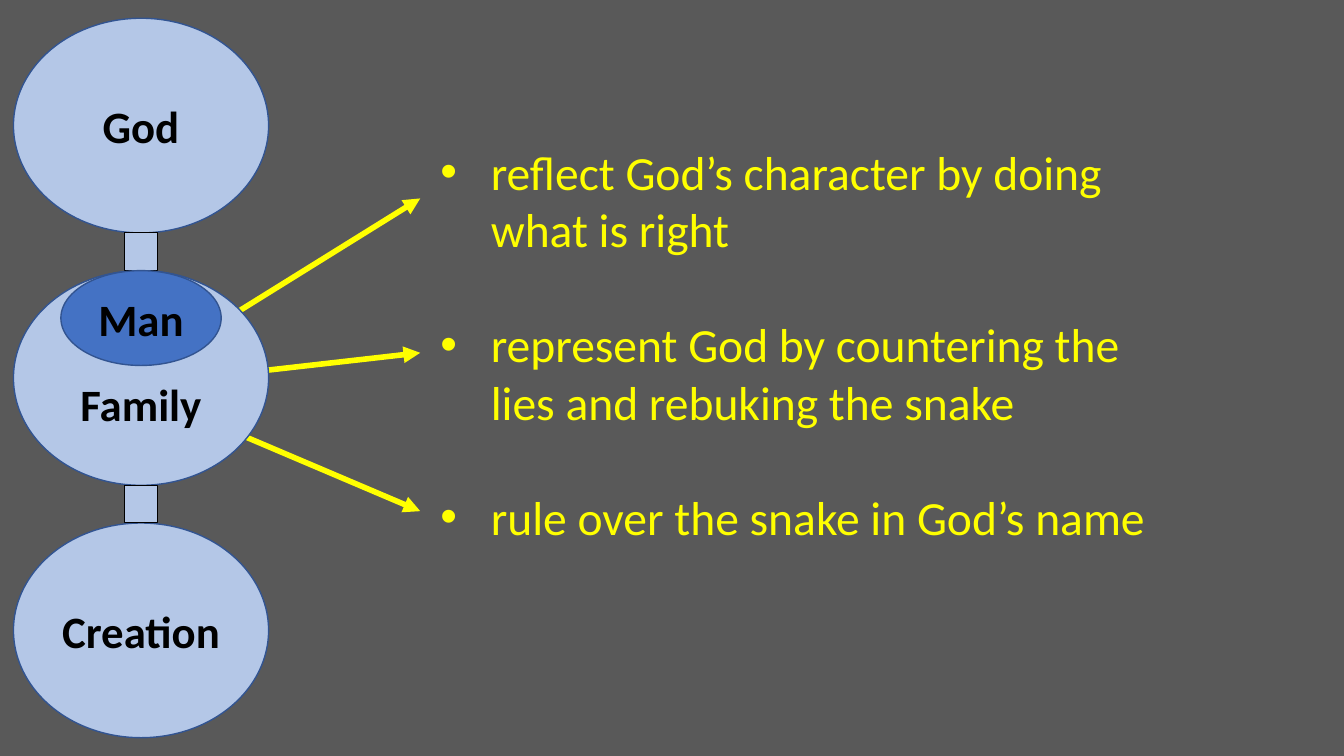
from lxml import etree
from pptx import Presentation
from pptx import util as u
from pptx.dml.color import RGBColor
from pptx.enum import shapes, text
from pptx.oxml.ns import qn

COLORS = {
    "background": "595959",
    "highlight": "FFFF00",
    "circle": "B4C7E7",
    "man": "4472C4",
    "outline": "325491",
    "black": "000000",
}
FONT = "Calibri"


def color(name):
    """Return the named colour."""
    return RGBColor.from_string(COLORS[name])


def format_runs(paragraph, size, color_name, bold=False):
    """Format every run of a paragraph."""
    for run in paragraph.runs:
        run.font.name = FONT
        run.font.size = u.Pt(size)
        run.font.bold = bold
        run.font.color.rgb = color(color_name)


def add_block(slide, kind, box, fill, outline, width, label="", drop=0):
    """Add a filled shape whose centred label sits lower by half the drop."""
    shape = slide.shapes.add_shape(kind, *(u.Cm(length) for length in box))
    shape.shadow.inherit = False
    shape.fill.solid()
    shape.fill.fore_color.rgb = color(fill)
    shape.line.color.rgb = color(outline)
    shape.line.width = u.Pt(width)
    if label:
        frame = shape.text_frame
        frame.margin_left = frame.margin_right = 0
        frame.margin_top = u.Cm(0.13 + drop)
        frame.vertical_anchor = text.MSO_ANCHOR.MIDDLE
        frame.text = label
        paragraph = frame.paragraphs[0]
        paragraph.alignment = text.PP_ALIGN.CENTER
        format_runs(paragraph, 32, "black", bold=True)


def add_chain(slide, left, top, width, height):
    """Stack three linked circles in the box, with Man inside the middle one."""
    oval = shapes.MSO_SHAPE.OVAL
    link_width, link_height = 0.84, 0.95
    circle_height = (height - 2 * link_height) / 3
    pitch = circle_height + link_height
    center = left + width / 2
    for index, (label, drop) in enumerate([("God", 0), ("Family", 1.29), ("Creation", 0)]):
        add_block(slide, oval, (left, top + index * pitch, width, circle_height),
                  "circle", "outline", 1, label, drop)
    for index in range(2):
        add_block(slide, shapes.MSO_SHAPE.RECTANGLE,
                  (center - link_width / 2, top + index * pitch + circle_height,
                   link_width, link_height), "circle", "black", 0.75)
    man_width = 4.04
    add_block(slide, oval, (center - man_width / 2, top + pitch, man_width, 2.39),
              "man", "outline", 1, "Man")


def add_arrows(slide, left, top, width):
    """Fan three arrows across the box from the family to the duties."""
    for start, end in [(3.61, 0), (5.41, 7.88), (4.55, 3.89)]:
        arrow = slide.shapes.add_connector(
            shapes.MSO_CONNECTOR.STRAIGHT, u.Cm(left), u.Cm(top + start),
            u.Cm(left + width), u.Cm(top + end))
        arrow.line.color.rgb = color("highlight")
        arrow.line.width = u.Pt(4)
        etree.SubElement(arrow.line._get_or_add_ln(), qn("a:tailEnd"), type="triangle")
        etree.SubElement(arrow._element.spPr, qn("a:effectLst"))


def add_duties(slide, left, top, width, height):
    """Write the bulleted duties in the box."""
    duties = [
        "reflect God’s character by doing what is right",
        "represent God by countering the lies and rebuking the snake",
        "rule over the snake in God’s name",
    ]
    shape = slide.shapes.add_textbox(u.Cm(left), u.Cm(top), u.Cm(width), u.Cm(height))
    frame = shape.text_frame
    frame.word_wrap = True
    frame.text = "\n".join(duties)
    for index, paragraph in enumerate(frame.paragraphs):
        if index:
            paragraph.space_before = u.Pt(41.5)
        format_runs(paragraph, 34, "highlight")
        properties = paragraph._p.get_or_add_pPr()
        indent = u.Cm(1.27)
        properties.set("marL", str(indent))
        properties.set("indent", str(-indent))
        etree.SubElement(properties, qn("a:buFont"), typeface="Arial")
        etree.SubElement(properties, qn("a:buChar"), char="•")


def main():
    """Build and save the slide."""
    presentation = Presentation()
    presentation.slide_width = u.Cm(33.87)
    presentation.slide_height = u.Cm(19.05)
    slide = presentation.slides.add_slide(presentation.slide_layouts[6])
    slide.background.fill.solid()
    slide.background.fill.fore_color.rgb = color("background")
    add_duties(slide, 10.85, 3.48, 18.77, 10.44)
    add_arrows(slide, 4.78, 5, 5.81)
    add_chain(slide, 0.34, 0.46, 6.43, 18.13)
    presentation.save("out.pptx")


if __name__ == "__main__":
    main()
